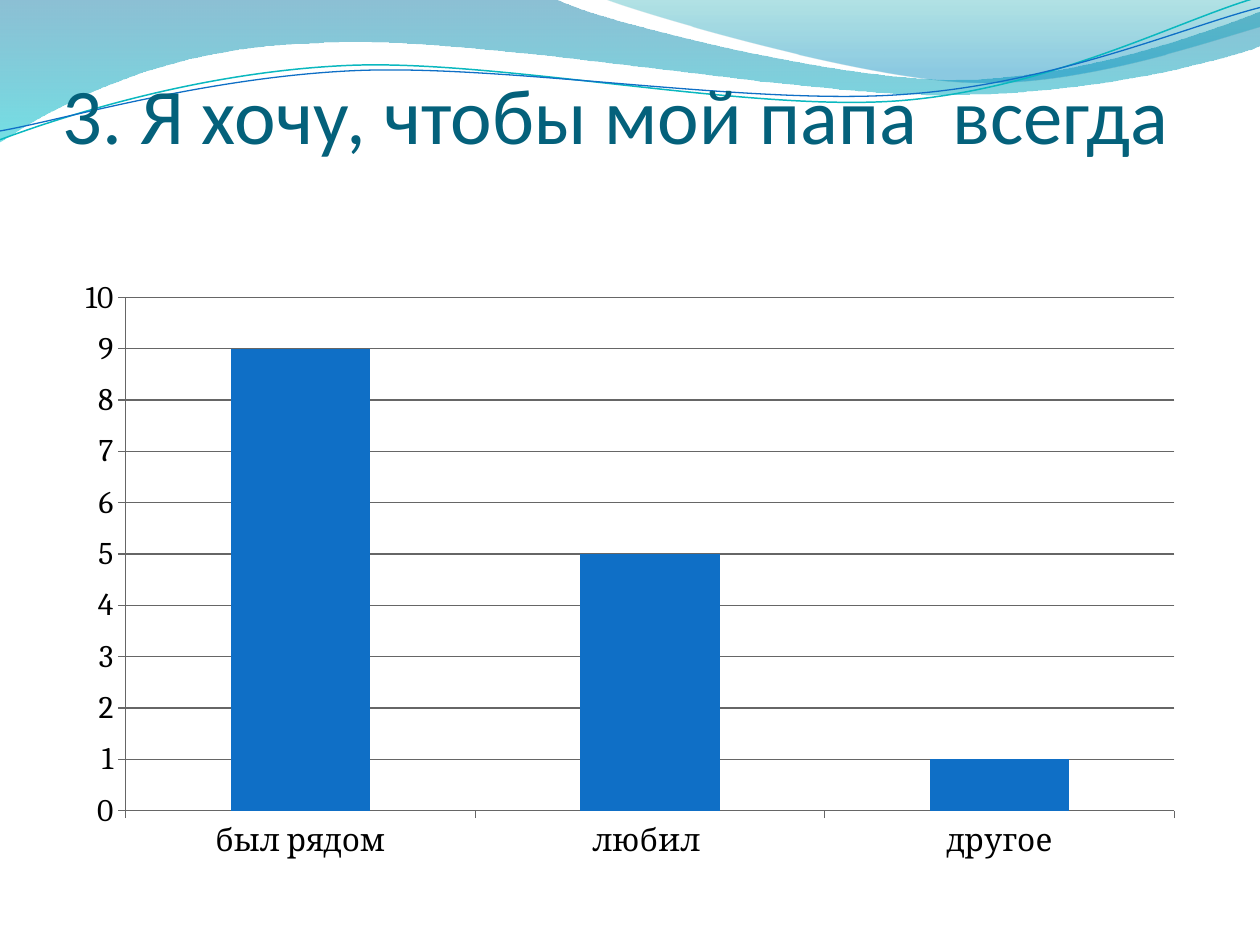
from dataclasses import dataclass
from math import cos, radians, sin

from lxml import etree
from pptx import Presentation
from pptx.chart.data import CategoryChartData
from pptx.dml.color import RGBColor
from pptx.enum.chart import XL_CHART_TYPE, XL_TICK_MARK
from pptx.enum.text import MSO_ANCHOR
from pptx.oxml.ns import qn
from pptx.util import Inches, Pt

COLUMNS = XL_CHART_TYPE.COLUMN_CLUSTERED
TICK_OUTSIDE = XL_TICK_MARK.OUTSIDE
ANCHOR_BOTTOM = MSO_ANCHOR.BOTTOM

WIDTH, HEIGHT = 10, 7.5
MARGIN = 0.05 * WIDTH
CONTENT_WIDTH = WIDTH - 2 * MARGIN
UNITS_PER_INCH = 1000

BLUE, TITLE_TEAL, AXIS_GREY, BLACK = "0F6FC6", "04617B", "666666", "000000"


@dataclass(frozen=True)
class Stop:
    position: int
    color: str
    opacity: int


@dataclass(frozen=True)
class Wave:
    """Outline in slide inches: a segment of one point is a line, of three a Bézier curve."""
    box: tuple
    start: tuple
    segments: tuple
    gradient: tuple = ()
    line_color: str = ""
    line_width: float = 0
    tilt: float = 0


WAVES = (
    Wave((-0.01, -0.01, 10.02, 1.14), (0, 0), (
        ((4.4, -0.01),),
        ((4.76, 0.17), (6.64, 0.63), (7.58, 0.63)),
        ((8.53, 0.63), (9.58, 0.26), (10, 0.09)),
        ((10.01, 0.36),),
        ((9.83, 0.44), (8.7, 0.76), (7.46, 0.75)),
        ((6.22, 0.75), (3.82, 0.28), (2.57, 0.34)),
        ((1.29, 0.36), (0.46, 0.83), (-0.01, 1.13)),
        ((0, 0),),
    ), gradient=(Stop(0, "0074A1", 45), Stop(100, "00C6CF", 55))),
    Wave((4.79, -0.01, 5.21, 0.7), (4.79, -0.01), (
        ((5.09, 0.11), (6.82, 0.62), (7.69, 0.65)),
        ((8.56, 0.69), (9.61, 0.32), (10, 0.21)),
        ((10, 0),),
        ((4.79, -0.01),),
    ), gradient=(Stop(0, "00A1A9", 30), Stop(80, "008BBF", 45))),
    Wave((-0.02, 0.22, 10.02, 0.71), (0, 1.11), (
        ((0.48, 0.93), (1.58, 0.57), (2.77, 0.52)),
        ((3.95, 0.47), (5.93, 0.89), (7.13, 0.8)),
        ((8.33, 0.71), (9.38, 0.15), (9.98, -0.02)),
    ), line_color="0AB8BF", line_width=0.85, tilt=-2.7),
    Wave((-0.02, 0.3, 10.03, 0.58), (0, 1.04), (
        ((0.47, 0.96), (1.64, 0.61), (2.83, 0.56)),
        ((4.03, 0.51), (5.97, 0.84), (7.17, 0.75)),
        ((8.36, 0.67), (9.41, 0.21), (10, 0.06)),
    ), line_color=BLUE, line_width=0.75, tilt=-2.7),
)

ANSWERS = {"был рядом": 9, "любил ": 5, "другое": 1}


def rgb(color: str) -> RGBColor:
    return RGBColor.from_string(color)


def local_point(wave: Wave, point: tuple) -> tuple:
    """Turn a slide point into path units of the wave's untilted box."""
    left, top, width, height = wave.box
    dx, dy = point[0] - left - width / 2, point[1] - top - height / 2
    angle = radians(-wave.tilt)
    x = dx * cos(angle) - dy * sin(angle) + width / 2
    y = dx * sin(angle) + dy * cos(angle) + height / 2
    return round(x * UNITS_PER_INCH), round(y * UNITS_PER_INCH)


def write_outline(shape, wave: Wave) -> None:
    """Replace the straight path of the shape by the wave's lines and curves."""
    outline = next(shape._element.iter(qn("a:path")))
    for child in list(outline):
        outline.remove(child)
    for index, segment in enumerate(((wave.start,), *wave.segments)):
        tag = "a:moveTo" if index == 0 else "a:lnTo" if len(segment) == 1 else "a:cubicBezTo"
        command = etree.SubElement(outline, qn(tag))
        for point in segment:
            x, y = local_point(wave, point)
            etree.SubElement(command, qn("a:pt"), x=str(x), y=str(y))
    if wave.gradient:
        etree.SubElement(outline, qn("a:close"))


def fill_downwards(shape, stops: tuple) -> None:
    """Give the shape a top-to-bottom gradient with translucent stops."""
    shape.fill.gradient()
    gradient = shape._element.spPr.find(qn("a:gradFill"))
    for child in list(gradient):
        gradient.remove(child)
    stop_list = etree.SubElement(gradient, qn("a:gsLst"))
    for stop in stops:
        entry = etree.SubElement(stop_list, qn("a:gs"), pos=str(stop.position * 1000))
        color = etree.SubElement(entry, qn("a:srgbClr"), val=stop.color)
        etree.SubElement(color, qn("a:alpha"), val=str(stop.opacity * 1000))
    etree.SubElement(gradient, qn("a:lin"), ang="5400000", scaled="0")


def draw_wave(slide, wave: Wave) -> None:
    left, top, width, height = (length * UNITS_PER_INCH for length in wave.box)
    builder = slide.shapes.build_freeform(left, top, scale=Inches(1) / UNITS_PER_INCH)
    builder.add_line_segments([(left + width, top + height)], close=False)
    shape = builder.convert_to_shape()
    write_outline(shape, wave)
    shape.rotation = wave.tilt
    shape.shadow.inherit = False
    if wave.gradient:
        fill_downwards(shape, wave.gradient)
        shape.line.fill.background()
    else:
        shape.fill.background()
        shape.line.color.rgb = rgb(wave.line_color)
        shape.line.width = Pt(wave.line_width)


def style_font(font, *, name: str, size: float, color: str) -> None:
    font.name, font.size = name, Pt(size)
    font.color.rgb = rgb(color)


def add_title(slide, text: str, *, top: float, height: float, name: str,
              size: float, color: str) -> None:
    """Write a bottom-anchored title whose text ends in a line break."""
    box = slide.shapes.add_textbox(Inches(MARGIN), Inches(top),
                                   Inches(CONTENT_WIDTH), Inches(height))
    frame = box.text_frame
    frame.word_wrap = True
    frame.vertical_anchor = ANCHOR_BOTTOM
    frame.margin_left = frame.margin_right = frame.margin_bottom = 0
    frame.margin_top = Inches(0.05)
    paragraph = frame.paragraphs[0]
    run = paragraph.add_run()
    run.text = text
    style_font(run.font, name=name, size=size, color=color)
    paragraph.add_line_break()
    line_break = paragraph._p.find(qn("a:br"))
    for parent, tag in ((line_break, "a:rPr"), (paragraph._p, "a:endParaRPr")):
        ending = etree.SubElement(parent, qn(tag), sz=str(size * 100))
        etree.SubElement(ending, qn("a:latin"), typeface=name)


def add_answer_chart(slide, answers: dict, *, top: float, height: float) -> None:
    data = CategoryChartData()
    data.categories = list(answers)
    data.add_series("Series 1", list(answers.values()))
    chart = slide.shapes.add_chart(COLUMNS, Inches(MARGIN), Inches(top),
                                   Inches(CONTENT_WIDTH), Inches(height), data).chart
    chart.has_legend = chart.has_title = False
    style_font(chart.font, name="Cambria", size=18, color=BLACK)

    plot = chart.plots[0]
    plot.gap_width = 150
    plot.vary_by_categories = False
    bars = plot.series[0].format.fill
    bars.solid()
    bars.fore_color.rgb = rgb(BLUE)

    values = chart.value_axis
    values.minimum_scale, values.maximum_scale, values.major_unit = 0, 10, 1
    values.has_major_gridlines = True
    for axis in (chart.category_axis, values):
        axis.major_tick_mark = TICK_OUTSIDE
    for ruled in (chart.category_axis, values, values.major_gridlines):
        ruled.format.line.color.rgb = rgb(AXIS_GREY)
        ruled.format.line.width = Pt(0.75)


def main() -> None:
    presentation = Presentation()
    presentation.slide_width, presentation.slide_height = Inches(WIDTH), Inches(HEIGHT)
    slide = presentation.slides.add_slide(presentation.slide_layouts[6])
    for wave in WAVES:
        draw_wave(slide, wave)
    add_title(slide, "3. Я хочу, чтобы мой папа  всегда ", top=0.77, height=1.25,
              name="Calibri", size=45, color=TITLE_TEAL)
    add_answer_chart(slide, ANSWERS, top=2.12, height=0.64 * HEIGHT)
    presentation.save("out.pptx")


if __name__ == "__main__":
    main()
